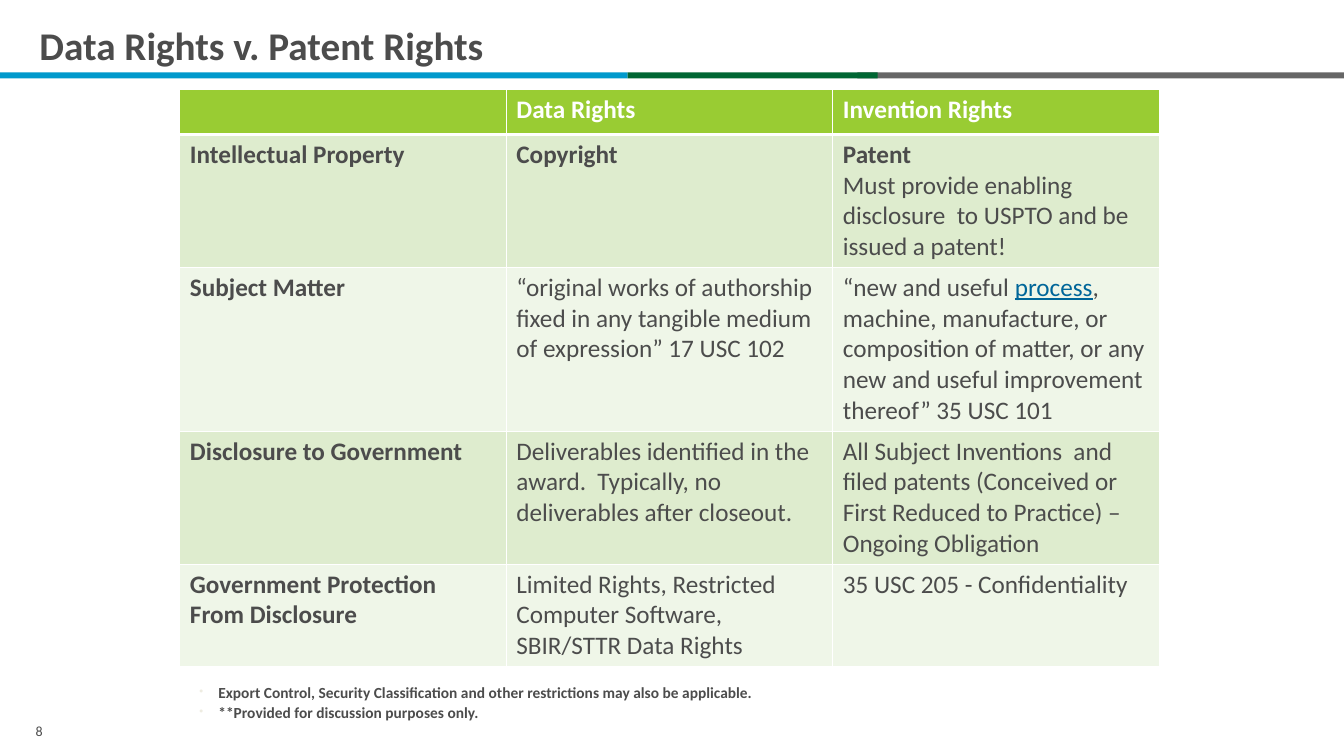
from dataclasses import dataclass

from lxml.etree import SubElement
from pptx import Presentation
from pptx.dml.color import RGBColor
from pptx.enum.shapes import MSO_SHAPE
from pptx.enum.text import MSO_ANCHOR, PP_ALIGN
from pptx.oxml.ns import qn
from pptx.util import Pt


@dataclass(frozen=True)
class Theme:
    """Colours, font and type sizes of the deck."""
    font: str = "Calibri"
    text: str = "4C4C4C"
    white: str = "FFFFFF"
    header: str = "99CC33"
    bands: tuple = ("DEECCE", "EFF6E8")
    link: str = "006699"
    bullet: str = "EEECE1"
    blue: str = "0099CC"
    grey: str = "666666"
    green: str = "006633"
    title_size: int = 28
    table_size: int = 18
    note_size: int = 11
    number_size: int = 10


THEME = Theme()
LINKED_WORD = "process"
ROWS = [
    ["", "Data Rights", "Invention Rights"],
    ["Intellectual Property", "Copyright",
     "Patent\nMust provide enabling disclosure  to USPTO and be issued a patent!"],
    ["Subject Matter",
     "“original works of authorship fixed in any tangible medium of expression” 17 USC 102",
     "“new and useful\u00a0process, machine, manufacture, or composition of matter, "
     "or any new and useful improvement thereof” 35 USC 101"],
    ["Disclosure to Government",
     "Deliverables identified in the award.  Typically, no deliverables after closeout.",
     "All Subject Inventions  and filed patents (Conceived or First Reduced to Practice) "
     "– Ongoing Obligation"],
    ["Government Protection From Disclosure",
     "Limited Rights, Restricted Computer Software, SBIR/STTR Data Rights",
     "35 USC 205 - Confidentiality"],
]
ROW_HEIGHTS = [32, 95, 117, 95, 73]
BOLD_TEXTS = {"Copyright", "Patent"}
NOTES = [
    "Export Control, Security Classification and other restrictions may also be applicable.",
    "**Provided for discussion purposes only.",
]


def style(font, size, color=THEME.text, bold=False):
    """Set the typeface, size, colour and weight of a font."""
    font.name = THEME.font
    font.size = Pt(size)
    font.bold = bold
    font.color.rgb = RGBColor.from_string(color)


def add_title(page, left, top, width, height):
    """Place the slide title in its placeholder."""
    title = page.shapes.title
    title.left, title.top, title.width, title.height = map(Pt, (left, top, width, height))
    title.text_frame.text = "Data Rights v. Patent Rights"
    title.text_frame.vertical_anchor = MSO_ANCHOR.MIDDLE
    para = title.text_frame.paragraphs[0]
    para.alignment = PP_ALIGN.LEFT
    style(para.font, THEME.title_size, bold=True)


def add_rule(page, left, top, width, height):
    """Draw the three-coloured rule under the title."""
    for start, end, color in [(0, 0.467, THEME.blue), (0.638, 1, THEME.grey),
                              (0.467, 0.653, THEME.green)]:
        bar = page.shapes.add_shape(MSO_SHAPE.RECTANGLE, Pt(left + start * width), Pt(top),
                                    Pt((end - start) * width), Pt(height))
        bar.shadow.inherit = False
        bar.fill.solid()
        bar.fill.fore_color.rgb = RGBColor.from_string(color)
        bar.line.fill.background()


def set_borders(cell, is_header, below_header):
    """Give a cell white borders, heavy between header and body."""
    properties = cell._tc.get_or_add_tcPr()
    widths = {"a:lnL": 1, "a:lnR": 1, "a:lnT": 3 if below_header else 1,
              "a:lnB": 3 if is_header else 1}
    for tag, width in widths.items():
        line = SubElement(properties, qn(tag), w=str(Pt(width)))
        SubElement(SubElement(line, qn("a:solidFill")), qn("a:srgbClr"), val=THEME.white)


def fill_cell(cell, text, row, column):
    """Write and colour one table cell."""
    is_header = row == 0
    set_borders(cell, is_header, row == 1)
    cell.fill.solid()
    fill = THEME.header if is_header else THEME.bands[(row - 1) % 2]
    cell.fill.fore_color.rgb = RGBColor.from_string(fill)
    color = THEME.white if is_header else THEME.text
    for index, line in enumerate(text.split("\n")):
        frame = cell.text_frame
        para = frame.add_paragraph() if index else frame.paragraphs[0]
        bold = is_header or column == 0 or line in BOLD_TEXTS
        before, word, after = line.partition(LINKED_WORD)
        for part in filter(None, (before, word, after)):
            span = para.add_run()
            span.text = part
            linked = part == LINKED_WORD
            style(span.font, THEME.table_size, THEME.link if linked else color, bold)
            if linked:
                span.font.underline = True
        if not line:
            style(para.font, THEME.table_size, color, bold)


def add_rights_table(page, left, top, width):
    """Build the comparison table with equal columns."""
    table = page.shapes.add_table(len(ROWS), len(ROWS[0]), Pt(left), Pt(top), Pt(width),
                                  Pt(sum(ROW_HEIGHTS))).table
    for column in table.columns:
        column.width = Pt(width / len(ROWS[0]))
    for row, (height, texts) in enumerate(zip(ROW_HEIGHTS, ROWS)):
        table.rows[row].height = Pt(height)
        for column, text in enumerate(texts):
            fill_cell(table.cell(row, column), text, row, column)


def add_notes(page, left, top, width, height):
    """Place the bulleted remarks under the table."""
    frame = page.shapes.add_textbox(Pt(left), Pt(top), Pt(width), Pt(height)).text_frame
    frame.word_wrap = False
    for index, note in enumerate(NOTES):
        para = frame.add_paragraph() if index else frame.paragraphs[0]
        para.text = note
        properties = para._p.get_or_add_pPr()
        properties.set("marL", str(Pt(13.5)))
        properties.set("indent", str(Pt(-13.5)))
        SubElement(SubElement(properties, qn("a:buClr")), qn("a:srgbClr"), val=THEME.bullet)
        SubElement(properties, qn("a:buSzPct"), val="75000")
        SubElement(properties, qn("a:buChar"), char="•")
        para.line_spacing = 0.9
        if index:
            para.space_before = Pt(2.2)
        style(para.font, THEME.note_size, bold=True)


def add_page_number(page, left, top, width, height):
    """Place the slide number in the bottom corner."""
    frame = page.shapes.add_textbox(Pt(left), Pt(top), Pt(width), Pt(height)).text_frame
    frame.word_wrap = True
    para = frame.paragraphs[0]
    para.text = "8"
    para.alignment = PP_ALIGN.CENTER
    para.line_spacing = 0.9
    style(para.font, THEME.number_size)


def main():
    """Build the slide and save the deck."""
    deck = Presentation()
    deck.slide_width, deck.slide_height = Pt(960), Pt(540)
    page = deck.slides.add_slide(deck.slide_layouts[5])
    add_page_number(page, 4, 514, 48, 19)
    add_rule(page, 0, 51.8, 960, 4.3)
    add_title(page, 21, 0, 916, 64)
    add_rights_table(page, 128.5, 64, 699.6)
    add_notes(page, 135.4, 486, 414, 34)
    deck.save("out.pptx")


if __name__ == "__main__":
    main()
